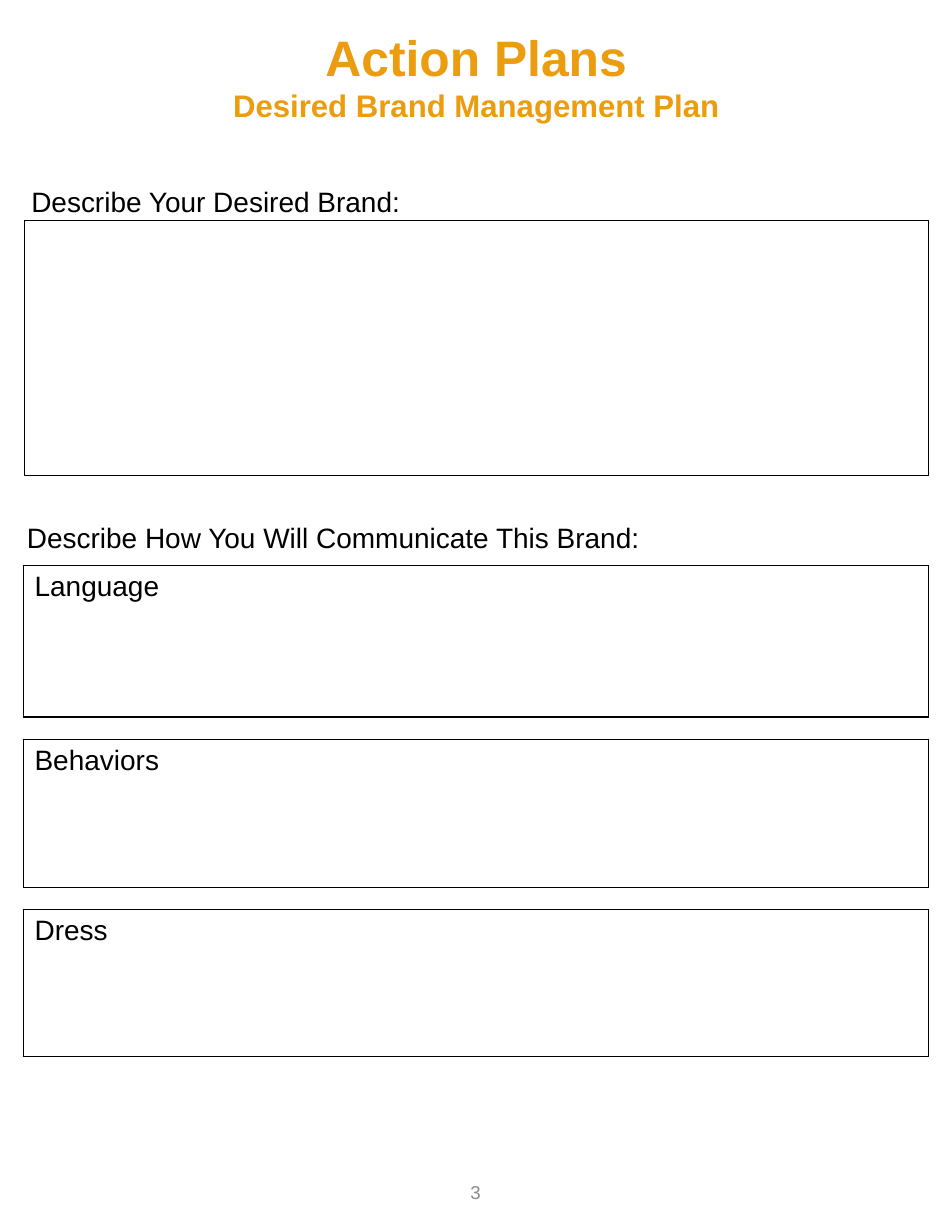
from pptx import Presentation
from pptx.dml.color import RGBColor
from pptx.enum.shapes import MSO_SHAPE
from pptx.enum.text import MSO_ANCHOR, PP_ALIGN
from pptx.oxml.ns import qn
from pptx.util import Cm, Pt
from lxml.etree import SubElement

COLORS = {
    "background": "EEECE1",
    "page": "FFFFFF",
    "title": "EB9C0F",
    "text": "000000",
    "line": "000000",
    "number": "8C8C8C",
}
FONT = "Arial"
PAGE_WIDTH, PAGE_HEIGHT = 21.59, 27.94
GAP_HEIGHT = 0.51
ENTRIES = [("Language", 3.43), ("Behaviors", 3.35), ("Dress", 3.33)]
LAST_ROW_HEIGHT = 1.02


def color(name):
    return RGBColor.from_string(COLORS[name])


def add_run(paragraph, text, size, color_name="text", bold=False):
    run = paragraph.add_run()
    run.text = text
    run.font.name = FONT
    run.font.size = Pt(size)
    run.font.bold = bold
    run.font.color.rgb = color(color_name)


def add_text_frame(slide, box):
    shape = slide.shapes.add_textbox(*map(Cm, box))
    shape.text_frame.word_wrap = True
    return shape.text_frame


def add_rectangle(slide, box):
    shape = slide.shapes.add_shape(MSO_SHAPE.RECTANGLE, *map(Cm, box))
    shape.shadow.inherit = False
    return shape


def add_page(slide, box):
    slide.background.fill.solid()
    slide.background.fill.fore_color.rgb = color("background")
    page = add_rectangle(slide, box)
    page.fill.solid()
    page.fill.fore_color.rgb = color("page")
    page.line.fill.background()


def add_title(slide, box):
    frame = add_text_frame(slide, box)
    title, subtitle = frame.paragraphs[0], frame.add_paragraph()
    title.alignment = subtitle.alignment = PP_ALIGN.CENTER
    add_run(title, "Action Plans", 32, "title", True)
    add_run(subtitle, "Desired Brand Management Plan", 20, "title", True)


def add_heading(slide, box, text, indent=0.25):
    frame = add_text_frame(slide, box)
    frame.margin_left = Cm(indent)
    add_run(frame.paragraphs[0], text, 18)


def add_answer_box(slide, box):
    answer = add_rectangle(slide, box)
    answer.fill.background()
    answer.line.color.rgb = color("line")
    answer.line.width = Pt(0.75)


def set_borders(cell, sides):
    """Draw the named sides (L, R, T, B) and clear the others."""
    properties = cell._tc.get_or_add_tcPr()
    for side in "LRTB":
        border = SubElement(properties, qn(f"a:ln{side}"), w=str(Pt(1)))
        if side in sides:
            fill = SubElement(border, qn("a:solidFill"))
            SubElement(fill, qn("a:srgbClr"), val=COLORS["line"])
        else:
            SubElement(border, qn("a:noFill"))


def add_communication_table(slide, box):
    """Bordered entry rows, each with an open gap row above it."""
    rows = []
    for index, (label, height) in enumerate(ENTRIES):
        rows.append(("", GAP_HEIGHT, "TB" if index else "B"))
        rows.append((label, height, "LRTB"))
    rows.append(("", LAST_ROW_HEIGHT, "T"))

    table = slide.shapes.add_table(len(rows), 1, *map(Cm, box)).table
    table.first_row = table.horz_banding = False
    for index, (label, height, sides) in enumerate(rows):
        table.rows[index].height = Cm(height)
        cell = table.cell(index, 0)
        set_borders(cell, sides)
        cell.fill.background()
        paragraph = cell.text_frame.paragraphs[0]
        if label:
            add_run(paragraph, label, 18)
        else:
            cell.margin_top = cell.margin_bottom = 0
            SubElement(paragraph._p, qn("a:endParaRPr"), sz="800")


def add_page_number(slide, box):
    frame = add_text_frame(slide, box)
    frame.vertical_anchor = MSO_ANCHOR.BOTTOM
    paragraph = frame.paragraphs[0]
    paragraph.alignment = PP_ALIGN.CENTER
    add_run(paragraph, "3", 12, "number")


def main():
    presentation = Presentation()
    presentation.slide_width = Cm(PAGE_WIDTH)
    presentation.slide_height = Cm(PAGE_HEIGHT)
    slide = presentation.slides.add_slide(presentation.slide_layouts[6])

    table_height = sum(GAP_HEIGHT + height for _, height in ENTRIES) + LAST_ROW_HEIGHT
    add_page(slide, (0, 0, PAGE_WIDTH, PAGE_HEIGHT))
    add_communication_table(slide, (0.53, 12.32, 20.52, table_height))
    add_heading(slide, (0, 11.68, 20.93, 1.02),
                "Describe How You Will Communicate This Brand:", indent=0.61)
    add_answer_box(slide, (0.56, 5, 20.5, 5.79))
    add_heading(slide, (0.46, 4.06, 20.93, 1.02), "Describe Your Desired Brand:")
    add_page_number(slide, (7.37, 25.91, 6.83, 1.5))
    add_title(slide, (2.97, 0.48, 15.67, 2.49))
    presentation.save("out.pptx")


if __name__ == "__main__":
    main()
